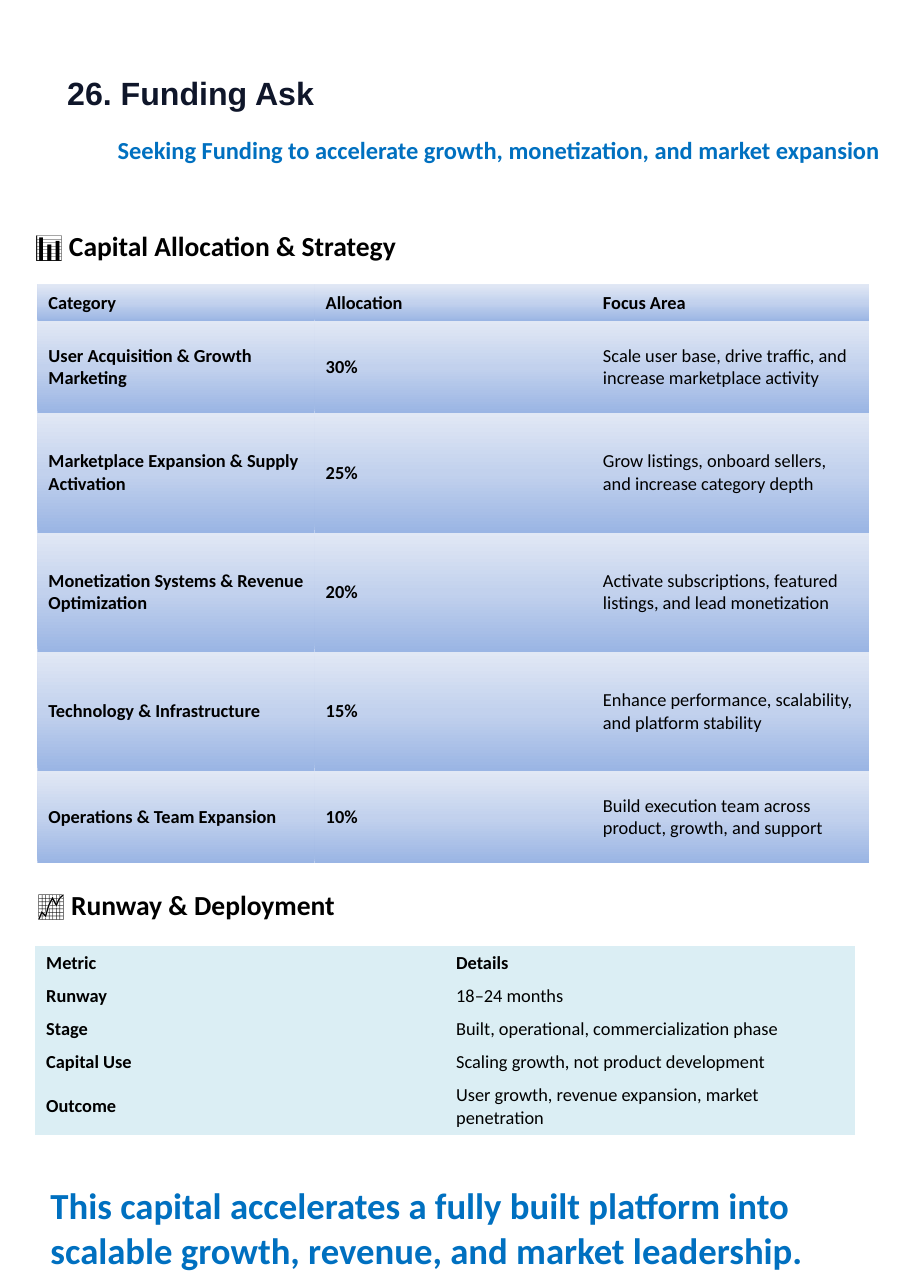
"""Build the funding ask page: capital allocation, runway and closing statement."""
from lxml import etree
from pptx import Presentation
from pptx.dml.color import RGBColor
from pptx.enum.text import MSO_ANCHOR, MSO_AUTO_SIZE, PP_ALIGN
from pptx.oxml import parse_xml
from pptx.util import Inches, Pt

TOP, MIDDLE = MSO_ANCHOR.TOP, MSO_ANCHOR.MIDDLE
LEFT = PP_ALIGN.LEFT
NO_FIT = MSO_AUTO_SIZE.NONE
TITLE_ONLY = 5
NO_STYLE = "{2D5ABB26-0587-4C30-8999-92F81FD0307C}"
DRAWING = "http://schemas.openxmlformats.org/drawingml/2006/main"
COLORS = {"navy": "0F162A", "blue": "0070C0", "black": "000000", "ice": "DBEEF4",
          "deep": "9AB5E4", "mid": "C2D1ED", "pale": "E1E8F5"}

prs = Presentation()
prs.slide_width, prs.slide_height = Inches(8.26), Inches(11.69)
COL, ROW = prs.slide_width / 100, prs.slide_height / 100
slide = prs.slides.add_slide(prs.slide_layouts[TITLE_ONLY])


def write(frame, text, size=12, color="black", bold=True, font="Calibri", anchor=TOP, icon=""):
    frame.word_wrap = True
    frame.vertical_anchor = anchor
    paragraph = frame.paragraphs[0]
    paragraph.alignment = LEFT
    for part, weight in ((icon, False), (text, bold)):
        if part:
            run = paragraph.add_run()
            run.text = part
            run.font.size, run.font.bold, run.font.name = Pt(size), weight, font
            run.font.color.rgb = RGBColor.from_string(COLORS[color])


def add_grid(rows, left, top, width, heights, gradient=None):
    columns = len(rows[0])
    frame = slide.shapes.add_table(len(rows), columns, round(left * COL), round(top * ROW),
                                   round(width * COL), round(sum(heights) * ROW))
    table = frame.table
    table._tbl.tblPr.find(f"{{{DRAWING}}}tableStyleId").text = NO_STYLE
    for column in table.columns:
        column.width = round(width * COL / columns)
    for r, (labels, height) in enumerate(zip(rows, heights)):
        table.rows[r].height = round(height * ROW)
        for c, label in enumerate(labels):
            cell = table.cell(r, c)
            write(cell.text_frame, label, bold=r == 0 or c < columns - 1)
            cell.vertical_anchor = MIDDLE
            if gradient is None:
                cell.fill.solid()
                cell.fill.fore_color.rgb = RGBColor.from_string(COLORS["ice"])
            else:
                cell._tc.get_or_add_tcPr().append(parse_xml(gradient))


title = slide.shapes.title
title.left, title.top = round(7.26 * COL), round(5.56 * ROW)
title.width, title.height = round(28 * COL), round(3.25 * ROW)
title_frame = title.text_frame
title_frame.auto_size = NO_FIT
title_frame.margin_left = Inches(0.01)
title_frame.margin_top = Inches(0.02)
title_frame.margin_right = title_frame.margin_bottom = 0
write(title_frame, "26. Funding Ask", size=21, color="navy", font="Arial")

statements = [
    (11.74, 10.09, 86.8, 5.47,
     "Seeking Funding to accelerate growth, monetization, and market expansion",
     {"size": 16, "color": "blue"}),
    (2.66, 17.37, 50, 3.42, "Capital Allocation & Strategy", {"size": 18, "icon": "📊 "}),
    (2.91, 68.52, 50, 3.42, "Runway & Deployment", {"size": 18, "icon": "📈 "}),
    (4.36, 91.45, 91.4, 7.78,
     "This capital accelerates a fully built platform into scalable growth, revenue, "
     "and market leadership.", {"size": 24, "color": "blue"}),
]
for left, top, width, height, text, style in statements:
    box = slide.shapes.add_textbox(round(left * COL), round(top * ROW),
                                   round(width * COL), round(height * ROW))
    write(box.text_frame, text, **style)

shading = etree.Element(f"{{{DRAWING}}}gradFill", nsmap={"a": DRAWING}, rotWithShape="1")
stops = etree.SubElement(shading, f"{{{DRAWING}}}gsLst")
for position, shade in ((0, "deep"), (50, "mid"), (100, "pale")):
    stop = etree.SubElement(stops, f"{{{DRAWING}}}gs", pos=str(position * 1000))
    etree.SubElement(stop, f"{{{DRAWING}}}srgbClr", val=COLORS[shade])
etree.SubElement(shading, f"{{{DRAWING}}}lin", ang=str(270 * 60000), scaled="0")

allocation = [
    ("Category", "Allocation", "Focus Area"),
    ("User Acquisition & Growth Marketing", "30%",
     "Scale user base, drive traffic, and increase marketplace activity"),
    ("Marketplace Expansion & Supply Activation", "25%",
     "Grow listings, onboard sellers, and increase category depth"),
    ("Monetization Systems & Revenue Optimization", "20%",
     "Activate subscriptions, featured listings, and lead monetization"),
    ("Technology & Infrastructure", "15%",
     "Enhance performance, scalability, and platform stability"),
    ("Operations & Team Expansion", "10%",
     "Build execution team across product, growth, and support"),
]
add_grid(allocation, 4.12, 22.07, 91.4, [2.88, 7.13, 9.27, 9.27, 9.27, 7.13],
         gradient=etree.tostring(shading))

runway = [
    ("Metric", "Details"),
    ("Runway", "18–24 months"),
    ("Stage", "Built, operational, commercialization phase"),
    ("Capital Use", "Scaling growth, not product development"),
    ("Outcome", "User growth, revenue expansion, market penetration"),
]
add_grid(runway, 3.87, 73.48, 90.1, [2.57] * 4 + [4.33])

prs.save("out.pptx")
